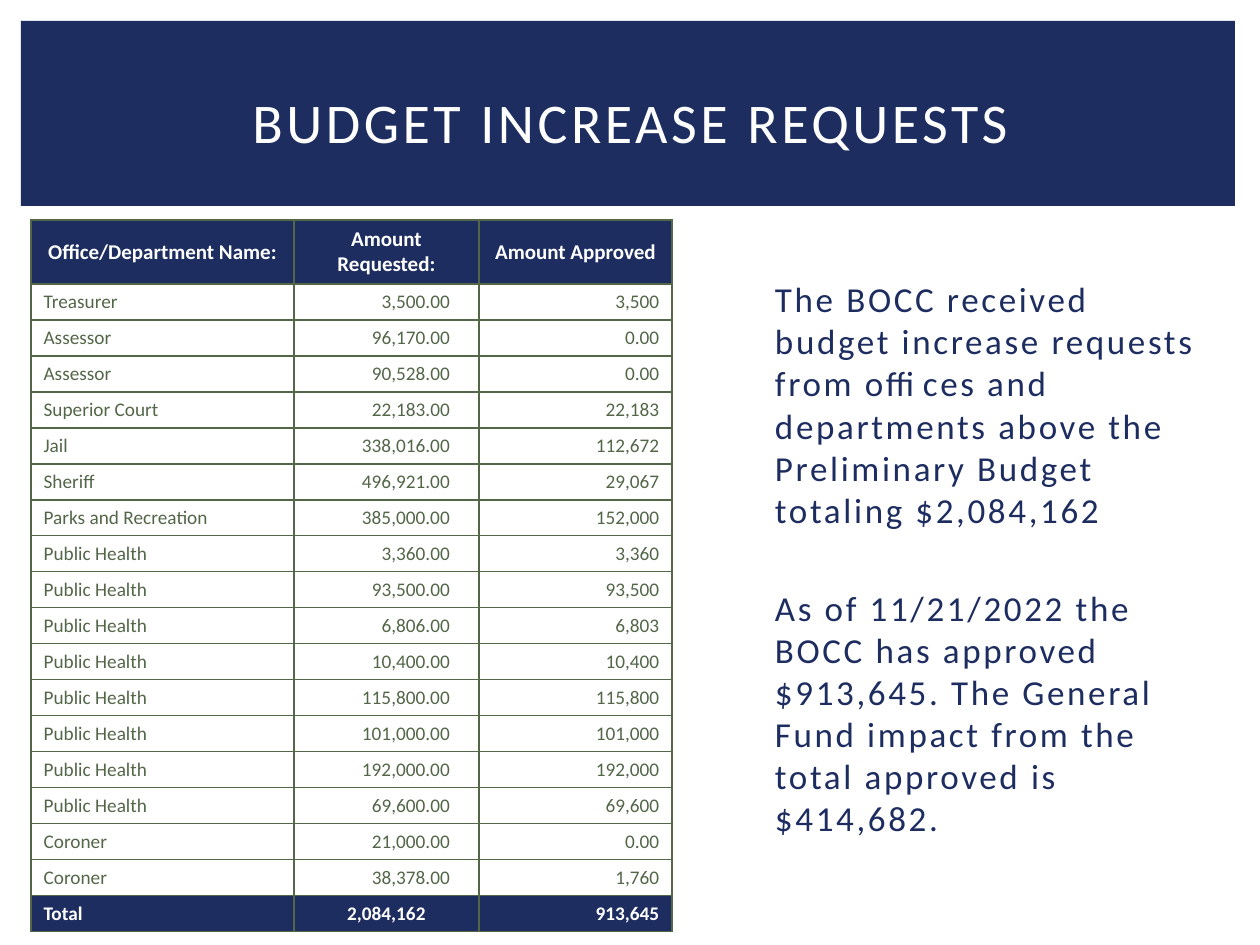
"""Build the budget increase requests slide."""
from lxml.etree import SubElement
from pptx import Presentation
from pptx.dml.color import RGBColor
from pptx.enum.shapes import MSO_SHAPE as Shape
from pptx.enum.text import MSO_ANCHOR as Anchor, PP_ALIGN as Align
from pptx.oxml.ns import qn
from pptx.util import Pt

PX = 914400 / 126
NAVY = RGBColor(0x1D, 0x2D, 0x60)
GREEN = RGBColor(0x53, 0x66, 0x48)
WHITE = RGBColor(0xFF, 0xFF, 0xFF)


def px(*lengths):
    return [round(length * PX) for length in lengths]


def write(para, text, size, color, bold=False, spacing=0):
    span = para.add_run()
    span.text = text
    for name, value in {"name": "Calibri", "size": Pt(size), "bold": bold}.items():
        setattr(span.font, name, value)
    span.font.color.rgb = color
    if spacing:
        span.font._element.set("spc", str(spacing))


deck = Presentation()
deck.slide_width, deck.slide_height = px(1260, 945)
page = deck.slides.add_slide(deck.slide_layouts[5])

band = page.shapes.add_shape(Shape.RECTANGLE, *px(21, 21, 1214, 185))
band.shadow.inherit = False
band.fill.solid()
band.fill.fore_color.rgb = NAVY
band.line.fill.background()
page.shapes._spTree.insert(2, band._element)

title = page.shapes.title
title.left, title.top, title.width, title.height = px(53, 49, 1155, 145)
title.text_frame.vertical_anchor = Anchor.MIDDLE
heading = title.text_frame.paragraphs[0]
heading.alignment = Align.CENTER
write(heading, "BUDGET INCREASE REQUESTS", 32, WHITE, spacing=200)

summary = [
    "The BOCC received budget increase requests from offices and departments "
    "above the Preliminary Budget totaling $2,084,162",
    "As of 11/21/2022 the BOCC has approved $913,645. The General Fund impact "
    "from the total approved is $414,682.",
]
box = page.shapes.add_textbox(*px(756, 220, 462, 693)).text_frame
box.word_wrap = True
box.margin_left, box.margin_top = px(19, 58)
for index, text in enumerate(summary):
    para = box.paragraphs[0] if index == 0 else box.add_paragraph()
    para.line_spacing = Pt(24)
    para.space_before = Pt(32 * index)
    write(para, text, 20, NAVY, spacing=150)

rows = [
    ("Office/Department Name:", "Amount Requested:", "Amount Approved"),
    ("Treasurer", "3,500.00", "3,500"),
    ("Assessor", "96,170.00", "0.00"),
    ("Assessor", "90,528.00", "0.00"),
    ("Superior Court", "22,183.00", "22,183"),
    ("Jail", "338,016.00", "112,672"),
    ("Sheriff", "496,921.00", "29,067"),
    ("Parks and Recreation", "385,000.00", "152,000"),
    ("Public Health", "3,360.00", "3,360"),
    ("Public Health", "93,500.00", "93,500"),
    ("Public Health", "6,806.00", "6,803"),
    ("Public Health", "10,400.00", "10,400"),
    ("Public Health", "115,800.00", "115,800"),
    ("Public Health", "101,000.00", "101,000"),
    ("Public Health", "192,000.00", "192,000"),
    ("Public Health", "69,600.00", "69,600"),
    ("Coroner", "21,000.00", "0.00"),
    ("Coroner", "38,378.00", "1,760"),
    ("Total", "2,084,162", "913,645"),
]
last = len(rows) - 1
table = page.shapes.add_table(len(rows), 3, *px(31, 220, 641, 712)).table
for column, width in zip(table.columns, px(263, 185, 193)):
    column.width = width

for r, values in enumerate(rows):
    table.rows[r].height = px(64 if r == 0 else 36)[0]
    strong = r in (0, last)
    for c, text in enumerate(values):
        cell = table.cell(r, c)
        cell.vertical_anchor = Anchor.MIDDLE
        para = cell.text_frame.paragraphs[0]
        para.alignment = Align.CENTER if r == 0 else (Align.LEFT, Align.RIGHT, Align.RIGHT)[c]
        if c == 1 and r == last:
            para.alignment = Align.CENTER
        elif c == 1 and r > 0:
            cell.margin_right = px(29)[0]
        write(para, text, 12 if r == 0 else 11, WHITE if strong else GREEN, strong)
        properties = cell._tc.get_or_add_tcPr()
        for side in ("a:lnL", "a:lnR", "a:lnT", "a:lnB"):
            border = SubElement(properties, qn(side), w=str(Pt(1)))
            paint = SubElement(border, qn("a:solidFill"))
            SubElement(paint, qn("a:srgbClr"), val=str(GREEN))
        cell.fill.solid()
        cell.fill.fore_color.rgb = NAVY if strong else WHITE

deck.save("out.pptx")
